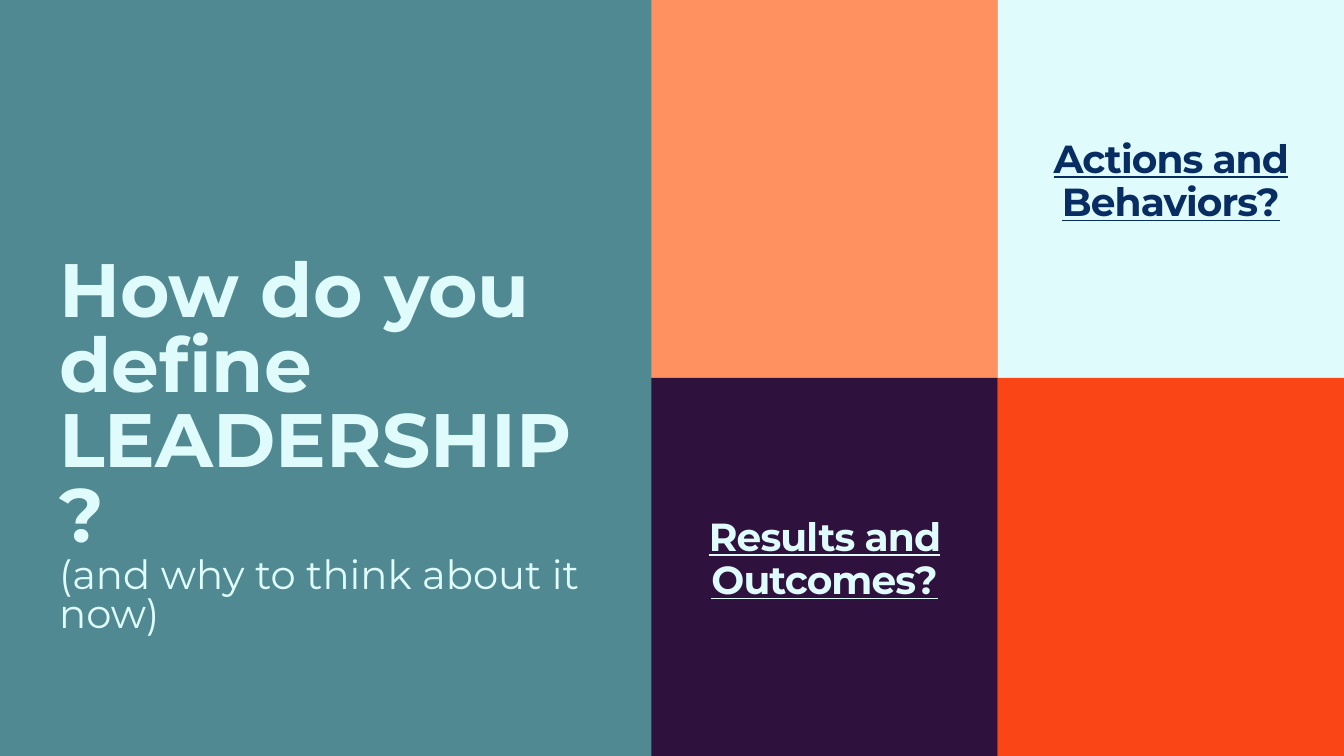
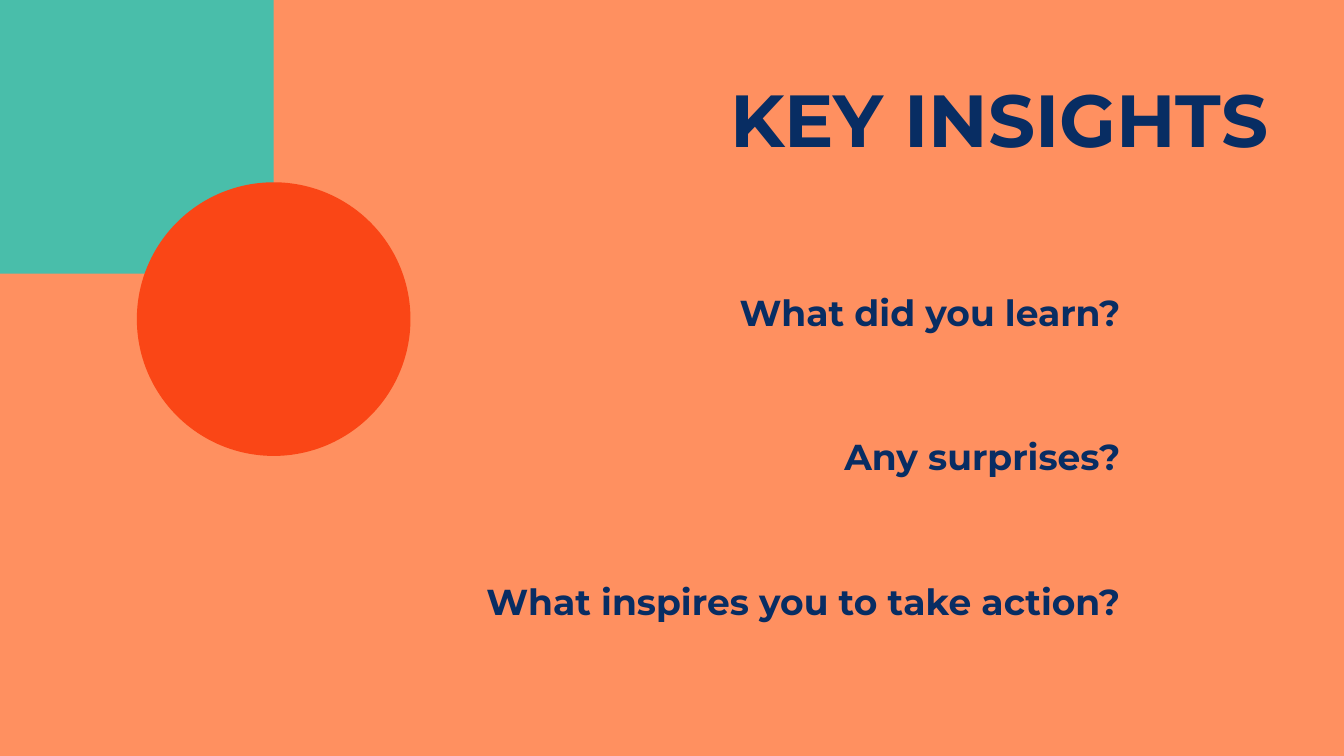
"""Build two slides: a question about leadership and a list of key insights."""
from dataclasses import dataclass

from pptx import Presentation
from pptx.dml.color import RGBColor
from pptx.enum.shapes import MSO_SHAPE
from pptx.enum.text import MSO_ANCHOR, MSO_AUTO_SIZE, PP_ALIGN
from pptx.util import Pt

FONT = "Montserrat"
TEAL, MINT, ORANGE, RED = "508991", "49BEAA", "FF9060", "FA4616"
PALE, PLUM, NAVY = "E0FBFC", "2F113E", "082D63"

SLIDE_WIDTH, SLIDE_HEIGHT = 1440, 810
TILE_WIDTH, TILE_HEIGHT = 371, SLIDE_HEIGHT / 2
TILE_LEFT = SLIDE_WIDTH - 2 * TILE_WIDTH
LABEL_WIDTH, LABEL_HEIGHT = 254, 92
CORNER_SIZE = 293.2


@dataclass
class Box:
    left: float
    top: float
    width: float
    height: float


@dataclass
class TextStyle:
    size: float
    line_spacing: float
    color: str
    alignment: PP_ALIGN = PP_ALIGN.LEFT
    bold: bool = True
    underline: bool = False
    tracking: float = 0


@dataclass
class Tile:
    column: int
    row: int
    fill: str
    label: str = ""
    label_color: str = NAVY


TILES = [
    Tile(0, 0, ORANGE),
    Tile(1, 0, PALE, "Actions and Behaviors?", NAVY),
    Tile(0, 1, PLUM, "Results and Outcomes?", PALE),
    Tile(1, 1, RED),
]
QUESTIONS = ["What did you learn?", "Any surprises?", "What inspires you to take action?"]
QUESTION_TOP, QUESTION_STEP = 303, 155.2


def paint(fill, color: str) -> None:
    fill.solid()
    fill.fore_color.rgb = RGBColor.from_string(color)


def place(shape, box: Box) -> None:
    shape.left, shape.top = Pt(box.left), Pt(box.top)
    shape.width, shape.height = Pt(box.width), Pt(box.height)


def add_block(slide, preset: MSO_SHAPE, box: Box, color: str) -> None:
    shape = slide.shapes.add_shape(preset, 0, 0, 0, 0)
    place(shape, box)
    shape.shadow.inherit = False
    paint(shape.fill, color)
    shape.line.fill.background()


def write(shape, text: str, styles: list[TextStyle]) -> None:
    frame = shape.text_frame
    frame.margin_left = frame.margin_top = frame.margin_right = frame.margin_bottom = 0
    frame.word_wrap = True
    frame.auto_size = MSO_AUTO_SIZE.NONE
    frame.vertical_anchor = MSO_ANCHOR.TOP
    frame.text = text
    for paragraph, style in zip(frame.paragraphs, styles):
        paragraph.alignment = style.alignment
        paragraph.line_spacing = Pt(style.line_spacing)
        for run in paragraph.runs:
            font = run.font
            font.name, font.size = FONT, Pt(style.size)
            font.bold, font.underline = style.bold, style.underline
            font.color.rgb = RGBColor.from_string(style.color)
            if style.tracking:
                run._r.get_or_add_rPr().set("spc", str(round(style.tracking * 100)))


def add_text(slide, box: Box, text: str, style: TextStyle) -> None:
    shape = slide.shapes.add_textbox(0, 0, 0, 0)
    place(shape, box)
    write(shape, text, [style])


def add_titled_slide(presentation, background: str, title: str, box: Box, styles: list[TextStyle]):
    slide = presentation.slides.add_slide(presentation.slide_layouts[5])
    paint(slide.background.fill, background)
    place(slide.shapes.title, box)
    write(slide.shapes.title, title, styles)
    return slide


def build_leadership(presentation) -> None:
    slide = add_titled_slide(
        presentation,
        TEAL,
        "How do you define LEADERSHIP?\n(and why to think about it now)",
        Box(63.4, 276.5, 576, 323.3),
        [TextStyle(81, 80.2, PALE), TextStyle(43, 42.6, PALE, bold=False)],
    )
    for tile in TILES:
        left = TILE_LEFT + tile.column * TILE_WIDTH
        top = tile.row * TILE_HEIGHT
        add_block(slide, MSO_SHAPE.RECTANGLE, Box(left, top, TILE_WIDTH, TILE_HEIGHT), tile.fill)
        if tile.label:
            label_box = Box(left + (TILE_WIDTH - LABEL_WIDTH) / 2, top + 147.5, LABEL_WIDTH, LABEL_HEIGHT)
            style = TextStyle(41.9, 46.5, tile.label_color, PP_ALIGN.CENTER, underline=True, tracking=-1)
            add_text(slide, label_box, tile.label, style)


def build_insights(presentation) -> None:
    slide = add_titled_slide(
        presentation,
        ORANGE,
        "KEY INSIGHTS",
        Box(198, 87, 1160.6, 88),
        [TextStyle(79, 86.9, NAVY, PP_ALIGN.RIGHT)],
    )
    add_block(slide, MSO_SHAPE.RECTANGLE, Box(0, 0, CORNER_SIZE, CORNER_SIZE), MINT)
    add_block(slide, MSO_SHAPE.OVAL, Box(CORNER_SIZE / 2, 195.3, CORNER_SIZE, CORNER_SIZE), RED)
    style = TextStyle(38.6, 54.1, NAVY, PP_ALIGN.RIGHT)
    for index, question in enumerate(QUESTIONS):
        add_text(slide, Box(240.5, QUESTION_TOP + index * QUESTION_STEP, 960, 52.6), question, style)


def main() -> None:
    presentation = Presentation()
    presentation.slide_width, presentation.slide_height = Pt(SLIDE_WIDTH), Pt(SLIDE_HEIGHT)
    build_leadership(presentation)
    build_insights(presentation)
    presentation.save("out.pptx")


if __name__ == "__main__":
    main()
